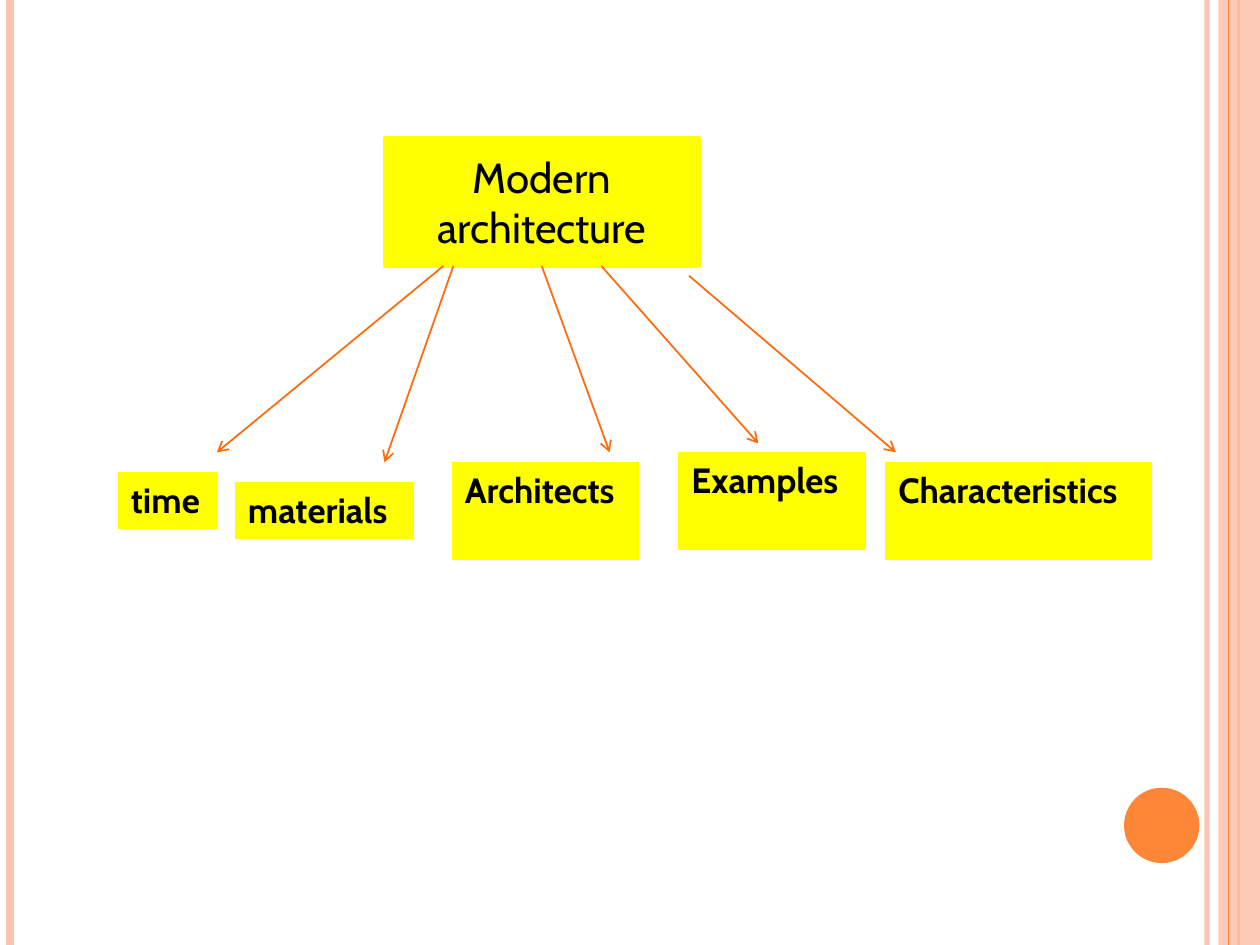
import pptx
import pptx.util
import pptx.dml.color
import pptx.enum.shapes
import pptx.enum.text
import pptx.oxml
import pptx.oxml.ns
import lxml.etree

Cm, Pt = pptx.util.Cm, pptx.util.Pt
SHAPE = pptx.enum.shapes.MSO_SHAPE
ANCHOR = pptx.enum.text.MSO_ANCHOR
ALIGN = pptx.enum.text.PP_ALIGN
qn = pptx.oxml.ns.qn

COLORS = {"peach": "FEC3AE", "orange": "FE8637", "arrow": "FF6B0A",
          "yellow": "FFFF00", "text": "000000"}
FONT = "Cabin"
WIDTH, HEIGHT = 25.4, 19.05

BACK_RAILS = [(24.33, "peach", 3, 93), (0.2, "peach", 4.5, 100),
              (24.97, "orange", 1.5, 100)]
FRONT_RAIL = (24.77, "orange", 0.75, 100)
BAND = (24.56, 0, 0.84, HEIGHT)
DISC = (22.66, 15.88, 1.52, 1.52)

TITLE = ("Modern architecture", (7.75, 2.77, 6.35, 2.59))
TOPICS = [
    ("time", (2.39, 9.53, 1.98, 1.12)),
    ("materials", (4.75, 9.73, 3.58, 1.12)),
    ("Architects", (9.12, 9.32, 3.76, 1.96)),
    ("Examples", (13.69, 9.12, 3.76, 1.96)),
    ("Characteristics", (17.86, 9.32, 5.36, 1.96)),
]
ARROWS = [
    ((8.94, 5.36), (4.37, 9.12)),
    ((9.14, 5.36), (7.75, 9.32)),
    ((10.92, 5.36), (12.29, 9.12)),
    ((12.12, 5.36), (15.29, 8.94)),
    ((13.89, 5.56), (18.06, 9.12)),
]


def rgb(name):
    return pptx.dml.color.RGBColor.from_string(COLORS[name])


def set_alpha(element, percent):
    color = next(element.iter(qn("a:srgbClr")))
    lxml.etree.SubElement(color, qn("a:alpha")).set("val", str(percent * 1000))


def add_line(s, start, end, color, width):
    c = s.shapes.add_connector(pptx.enum.shapes.MSO_CONNECTOR.STRAIGHT,
                               *map(Cm, start + end))
    c.line.color.rgb = rgb(color)
    c.line.width = Pt(width)
    lxml.etree.SubElement(c._element.spPr, qn("a:effectLst"))
    return c


def add_rail(s, x, color, width, opacity):
    c = add_line(s, (x, 0), (x, HEIGHT), color, width)
    if opacity < 100:
        set_alpha(c._element.spPr, opacity)


def add_arrow(s, start, end):
    c = add_line(s, start, end, "arrow", 1)
    ln = c.line._get_or_add_ln()
    lxml.etree.SubElement(ln, qn("a:tailEnd")).set("type", "arrow")


def add_filled(s, kind, box, color, line_width=0):
    sp = s.shapes.add_shape(kind, *map(Cm, box))
    sp.shadow.inherit = False
    sp.fill.solid()
    sp.fill.fore_color.rgb = rgb(color)
    if line_width:
        sp.line.color.rgb = rgb(color)
        sp.line.width = Pt(line_width)
    else:
        sp.line.fill.background()
    return sp


def add_label(s, text, box, size, bold, align, anchor, line_width):
    sp = add_filled(s, SHAPE.RECTANGLE, box, "yellow", line_width)
    tf = sp.text_frame
    tf.word_wrap = True
    tf.vertical_anchor = anchor
    p = tf.paragraphs[0]
    p.text = text
    p.alignment = align
    p.font.name = FONT
    p.font.size = Pt(size)
    p.font.bold = bold
    p.font.color.rgb = rgb("text")


def main():
    prs = pptx.Presentation()
    prs.slide_width, prs.slide_height = Cm(WIDTH), Cm(HEIGHT)
    s = prs.slides.add_slide(prs.slide_layouts[6])

    for rail in BACK_RAILS:
        add_rail(s, *rail)
    band = add_filled(s, SHAPE.RECTANGLE, BAND, "peach")
    set_alpha(band._element.spPr, 87)
    add_rail(s, *FRONT_RAIL)
    add_filled(s, SHAPE.OVAL, DISC, "orange")

    add_label(s, *TITLE, 24, False, ALIGN.CENTER, ANCHOR.MIDDLE, 2)
    for start, end in ARROWS:
        add_arrow(s, start, end)
    for text, box in TOPICS:
        add_label(s, text, box, 20, True, ALIGN.LEFT, ANCHOR.TOP, 0.75)

    prs.save("out.pptx")


if __name__ == "__main__":
    main()
